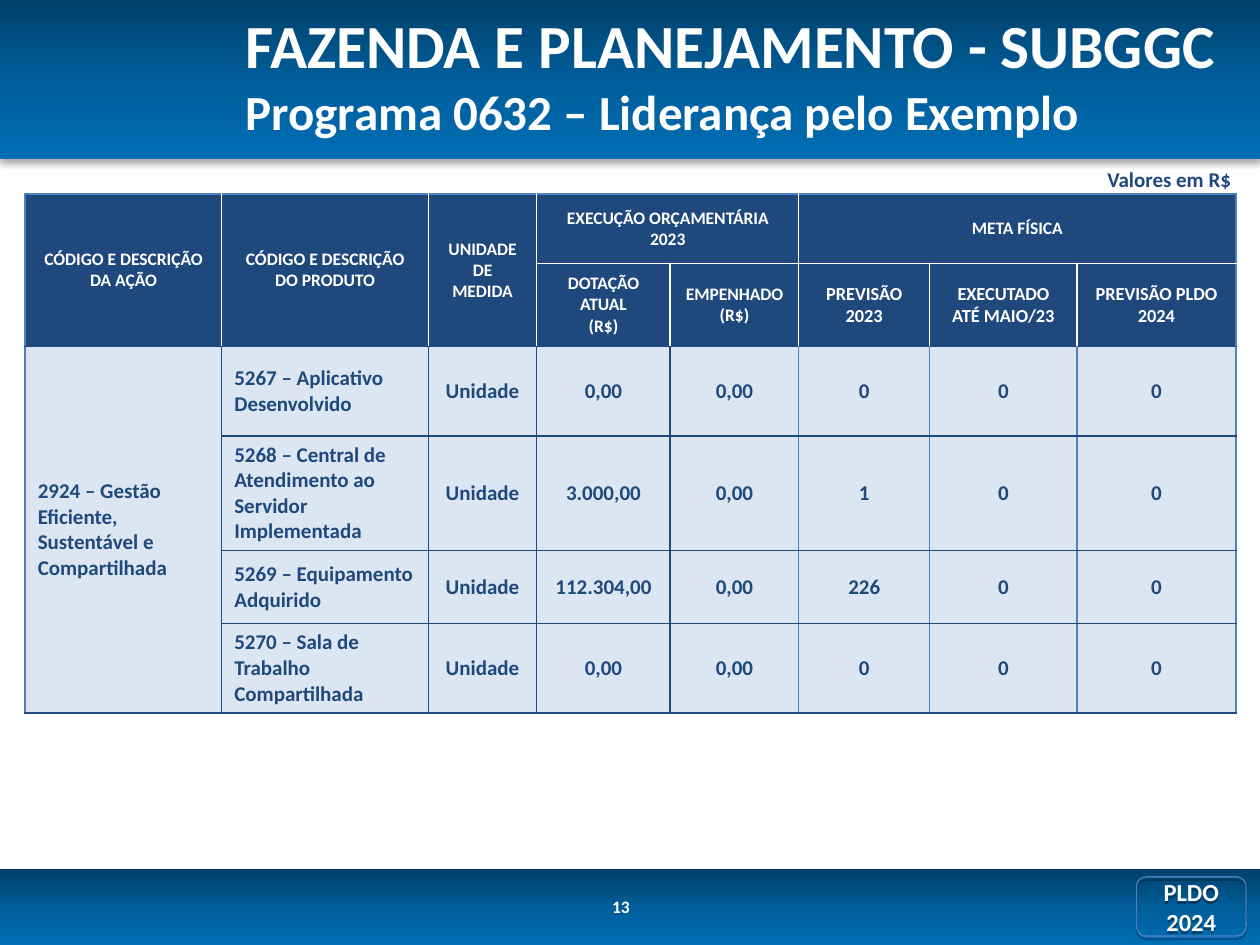
from lxml import etree
from pptx import Presentation
from pptx.dml.color import RGBColor
from pptx.enum.shapes import MSO_SHAPE
from pptx.enum.text import MSO_ANCHOR, PP_ALIGN
from pptx.oxml import parse_xml
from pptx.oxml.ns import nsdecls, qn
from pptx.util import Inches, Pt

RECTANGLE, ROUNDED = MSO_SHAPE.RECTANGLE, MSO_SHAPE.ROUNDED_RECTANGLE
LEFT, CENTER, JUSTIFY = PP_ALIGN.LEFT, PP_ALIGN.CENTER, PP_ALIGN.JUSTIFY
TOP, MIDDLE = MSO_ANCHOR.TOP, MSO_ANCHOR.MIDDLE
NAVY, BLUE, PALE, WHITE = "1F497D", "4F81BD", "DCE6F2", "FFFFFF"


def color(value):
    return RGBColor.from_string(value)


def write(para, text, size, tint):
    span = para.add_run()
    span.text = text
    span.font.name = "Calibri"
    span.font.size = Pt(size)
    span.font.bold = True
    span.font.color.rgb = color(tint)


deck = Presentation()
deck.slide_width, deck.slide_height = Inches(10), Inches(7.5)
page = deck.slides.add_slide(deck.slide_layouts[6])
unit = deck.slide_width // 100

panels = [
    (RECTANGLE, (0, 0, 100, 12.6), 32, 3.5, 2.2),
    (RECTANGLE, (0, 69, 100, 6), 32, 3.5, 2.2),
    (ROUNDED, (90.2, 69.6, 8.7, 4.7), 35, 0, 1.8),
]
for kind, place, opacity, blur, distance in panels:
    panel = page.shapes.add_shape(kind, *[int(n * unit) for n in place])
    properties = panel.fill._xPr
    if kind == RECTANGLE:
        stops = "".join(
            f'<a:gs pos="{share * 1000}"><a:srgbClr val="{tint}"/></a:gs>'
            for share, tint in [(0, "00416B"), (50, "005D99"), (100, "006EB5")]
        )
        properties.insert(2, parse_xml(
            f'<a:gradFill {nsdecls("a")} rotWithShape="1"><a:gsLst>{stops}</a:gsLst>'
            '<a:lin ang="5400000" scaled="0"/></a:gradFill>'))
        panel.line.fill.background()
    else:
        panel.fill.background()
        panel.line.color.rgb = color("4A7EBB")
        panel.line.width = Pt(0.75)
        panel.text_frame.word_wrap = True
        panel.text_frame.vertical_anchor = MIDDLE
        badge = panel.text_frame.paragraphs[0]
        badge.alignment = CENTER
        write(badge, "PLDO 2024", 14, WHITE)
    panel.shadow.inherit = False
    properties.find(qn("a:effectLst")).append(parse_xml(
        f'<a:outerShdw {nsdecls("a")} blurRad="{Pt(blur)}" dist="{Pt(distance)}" '
        f'dir="5400000" rotWithShape="0"><a:srgbClr val="000000">'
        f'<a:alpha val="{opacity * 1000}"/></a:srgbClr></a:outerShdw>'))

labels = [
    ((47.6, 70.6, 4.7, 2.4), TOP, LEFT, 1, WHITE, [("13", 10)]),
    ((18.5, 1.3, 79.5, 9.1), MIDDLE, LEFT, 1, WHITE,
     [("FAZENDA E PLANEJAMENTO - SUBGGC", 35),
      ("Programa 0632 – Liderança pelo Exemplo", 28)]),
    ((86.9, 13.1, 13.4, 2.4), TOP, JUSTIFY, 0.8, NAVY, [("Valores em R$", 12)]),
]
for place, anchor, alignment, spacing, tint, lines in labels:
    box = page.shapes.add_textbox(*[int(n * unit) for n in place])
    frame = box.text_frame
    frame.word_wrap = True
    frame.vertical_anchor = anchor
    para = frame.paragraphs[0]
    para.alignment = alignment
    para.line_spacing = spacing
    for number, (text, size) in enumerate(lines):
        if number:
            para.add_line_break()
        write(para, text, size, tint)

widths = [15.6, 16.4, 8.6, 10.6, 10.2, 10.4, 11.7, 12.6]
heights = [5.5, 6.6, 7.1, 9.1, 5.8, 7.1]
entries = [
    ["CÓDIGO E DESCRIÇÃO DA AÇÃO", "CÓDIGO E DESCRIÇÃO DO PRODUTO", "UNIDADE DE MEDIDA",
     "EXECUÇÃO ORÇAMENTÁRIA 2023", "", "META FÍSICA", "", ""],
    ["", "", "", "DOTAÇÃO\nATUAL\n(R$)", "EMPENHADO (R$)", "PREVISÃO 2023",
     "EXECUTADO ATÉ MAIO/23", "PREVISÃO PLDO 2024"],
    ["2924 – Gestão Eficiente, Sustentável e Compartilhada",
     "5267 – Aplicativo Desenvolvido", "Unidade", "0,00", "0,00", "0", "0", "0"],
    ["", "5268 – Central de Atendimento ao Servidor Implementada",
     "Unidade", "3.000,00", "0,00", "1", "0", "0"],
    ["", "5269 – Equipamento Adquirido", "Unidade", "112.304,00", "0,00", "226", "0", "0"],
    ["", "5270 – Sala de Trabalho Compartilhada", "Unidade", "0,00", "0,00", "0", "0", "0"],
]
row_count, column_count = len(heights), len(widths)
table = page.shapes.add_table(
    row_count, column_count, int(2 * unit), int(15.4 * unit),
    int(sum(widths) * unit), int(sum(heights) * unit)).table
table.first_row = table.horz_banding = False
for column, width in zip(table.columns, widths):
    column.width = int(width * unit)
for row, height in zip(table.rows, heights):
    row.height = int(height * unit)
for first, last in [((0, 0), (1, 0)), ((0, 1), (1, 1)), ((0, 2), (1, 2)),
                    ((0, 3), (0, 4)), ((0, 5), (0, 7)), ((2, 0), (5, 0))]:
    table.cell(*first).merge(table.cell(*last))

for r, entry in enumerate(entries):
    header = r < 2
    for c, text in enumerate(entry):
        cell = table.cell(r, c)
        if cell.is_spanned:
            continue
        cell.fill.solid()
        cell.fill.fore_color.rgb = color(NAVY if header else PALE)
        cell.vertical_anchor = MIDDLE
        para = cell.text_frame.paragraphs[0]
        para.alignment = CENTER if header or c > 1 else LEFT
        size = 12 if not header else 10.5 if r == 1 and c > 4 else 10
        for number, line in enumerate(text.split("\n")):
            if number:
                para.add_line_break()
            write(para, line, size, WHITE if header else NAVY)

        bottom = r + (cell.span_height if cell.is_merge_origin else 1)
        right = c + (cell.span_width if cell.is_merge_origin else 1)
        sides = [("lnL", c, True), ("lnR", right, True), ("lnT", r, False), ("lnB", bottom, False)]
        for position, (side, edge, upright) in enumerate(sides):
            if edge == 0 or upright and edge == column_count:
                tint = BLUE
            elif upright:
                tint = WHITE if header else BLUE if edge > 4 else NAVY
            else:
                tint = WHITE if edge == 1 else NAVY
            border = etree.Element(qn(f"a:{side}"), w=str(Pt(1)))
            fill = etree.SubElement(border, qn("a:solidFill"))
            etree.SubElement(fill, qn("a:srgbClr"), val=tint)
            cell._tc.get_or_add_tcPr().insert(position, border)

deck.save("out.pptx")
